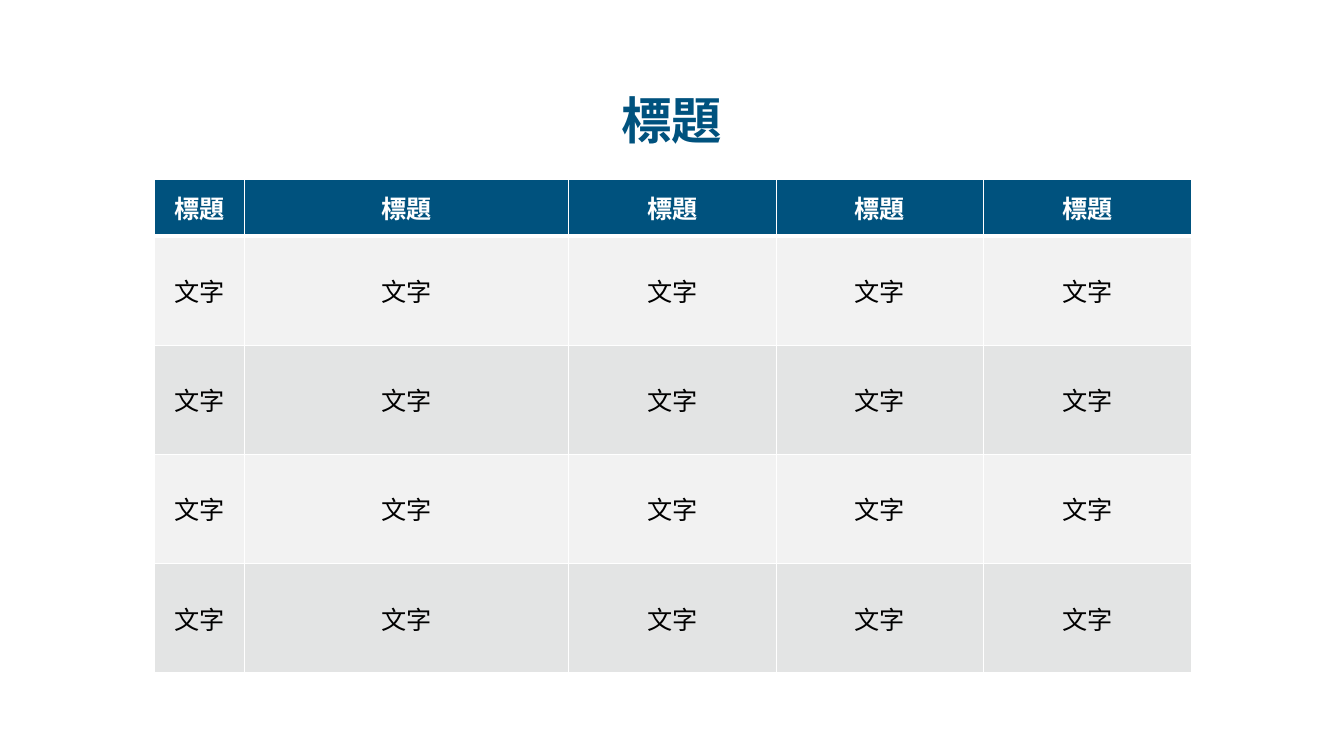
from dataclasses import dataclass

from lxml import etree
from pptx import Presentation
from pptx import util as u
from pptx.dml.color import RGBColor
from pptx.enum import text
from pptx.oxml.ns import qn

COLOURS = {
    "navy": "00527E",
    "white": "FFFFFF",
    "black": "000000",
    "light": "F2F2F2",
    "grey": "C9CACA",
}
FONT = "Noto Sans CJK SC"
COLUMN_WIDTHS = [2.28, 8.16, 5.23, 5.23, 5.23]


@dataclass
class RowStyle:
    label: str
    height: float
    fill: str
    font_colour: str = "black"
    bold: bool = False
    opacity: int = 100
    bottom_border: float = 1


HEADER = RowStyle("標題", 1.42, "navy", "white", bold=True, bottom_border=3)
LIGHT_ROW = RowStyle("文字", 2.75, "light")
GREY_ROW = RowStyle("文字", 2.75, "grey", opacity=50)
ROWS = [HEADER] + [LIGHT_ROW, GREY_ROW] * 2


def write_text(frame, content: str, *, size: float, colour: str, bold: bool) -> None:
    paragraph = frame.paragraphs[0]
    paragraph.alignment = text.PP_ALIGN.CENTER
    run = paragraph.add_run()
    run.text = content
    font = run.font
    font.name = FONT
    font.size = u.Pt(size)
    font.bold = bold
    font.color.rgb = RGBColor.from_string(COLOURS[colour])
    east_asian = etree.SubElement(run._r.get_or_add_rPr(), qn("a:ea"))
    east_asian.set("typeface", FONT)


def set_borders(cell, bottom_width: float) -> None:
    properties = cell._tc.get_or_add_tcPr()
    widths = {"a:lnL": 1, "a:lnR": 1, "a:lnT": 1, "a:lnB": bottom_width}
    for index, (tag, width) in enumerate(widths.items()):
        line = etree.Element(qn(tag), w=str(u.Pt(width)))
        fill = etree.SubElement(line, qn("a:solidFill"))
        etree.SubElement(fill, qn("a:srgbClr"), val=COLOURS["white"])
        properties.insert(index, line)


def format_cell(cell, style: RowStyle) -> None:
    cell.vertical_anchor = text.MSO_ANCHOR.MIDDLE
    cell.fill.solid()
    cell.fill.fore_color.rgb = RGBColor.from_string(COLOURS[style.fill])
    if style.opacity < 100:
        colour = cell._tc.tcPr.find(qn("a:solidFill"))[0]
        etree.SubElement(colour, qn("a:alpha"), val=str(style.opacity * 1000))
    set_borders(cell, style.bottom_border)
    write_text(cell.text_frame, style.label, size=18,
               colour=style.font_colour, bold=style.bold)


def add_grid(slide) -> None:
    table = slide.shapes.add_table(
        len(ROWS), len(COLUMN_WIDTHS), u.Cm(3.89), u.Cm(4.53),
        u.Cm(sum(COLUMN_WIDTHS)), u.Cm(sum(row.height for row in ROWS)),
    ).table
    for column, width in zip(table.columns, COLUMN_WIDTHS):
        column.width = u.Cm(width)
    for row, style in zip(table.rows, ROWS):
        row.height = u.Cm(style.height)
        for cell in row.cells:
            format_cell(cell, style)


def format_title(slide) -> None:
    title = slide.shapes.title
    title.left, title.top = u.Cm(14.68), u.Cm(2.11)
    title.width, title.height = u.Cm(4.5), u.Cm(1.8)
    frame = title.text_frame
    frame.word_wrap = True
    frame.auto_size = text.MSO_AUTO_SIZE.NONE
    frame.vertical_anchor = text.MSO_ANCHOR.TOP
    write_text(frame, "標題", size=36, colour="navy", bold=True)


def main() -> None:
    presentation = Presentation()
    presentation.slide_width = u.Cm(33.87)
    presentation.slide_height = u.Cm(19.05)
    slide = presentation.slides.add_slide(presentation.slide_layouts[5])
    format_title(slide)
    add_grid(slide)
    presentation.save("out.pptx")


if __name__ == "__main__":
    main()
